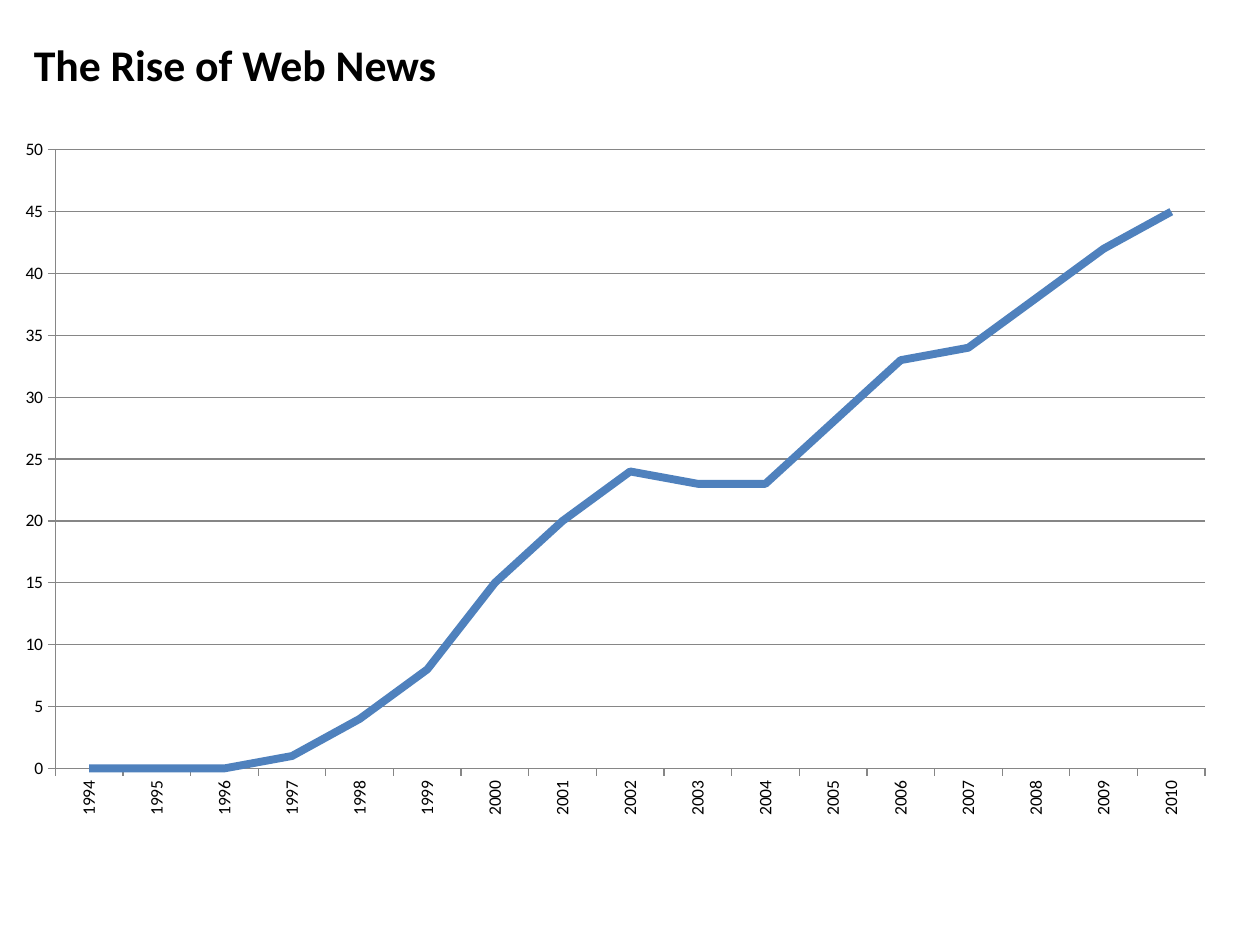
from dataclasses import dataclass

from lxml.etree import SubElement
from pptx import Presentation
from pptx.chart.axis import CategoryAxis, ValueAxis
from pptx.chart.chart import Chart
from pptx.chart.data import CategoryChartData
from pptx.dml.color import RGBColor
from pptx.dml.line import LineFormat
from pptx.enum.chart import XL_CHART_TYPE, XL_TICK_MARK
from pptx.enum.text import MSO_AUTO_SIZE
from pptx.oxml import parse_xml
from pptx.oxml.ns import nsdecls, qn
from pptx.util import Inches, Pt

COLORS = {"text": "000000", "grid": "868686", "news": "4F81BD"}
FONT = "Calibri"
FIRST_YEAR = 1994
WEB_NEWS = (0, 0, 0, 1, 4, 8, 15, 20, 24, 23, 23, 28, 33, 34, 38, 42, 45)


@dataclass(frozen=True)
class PlotLayout:
    x: float
    y: float
    w: float
    h: float


def style_line(line: LineFormat, color: str, width: float) -> None:
    line.color.rgb = RGBColor.from_string(COLORS[color])
    line.width = Pt(width)


def style_axis(axis: CategoryAxis | ValueAxis) -> None:
    axis.major_tick_mark = XL_TICK_MARK.OUTSIDE
    axis.minor_tick_mark = XL_TICK_MARK.NONE
    axis.tick_labels.font.size = Pt(10)
    style_line(axis.format.line, "grid", 0.75)


def place_plot(chart: Chart, layout: PlotLayout) -> None:
    plot_area = chart.element.find(".//" + qn("c:plotArea"))
    for old_layout in plot_area.findall(qn("c:layout")):
        plot_area.remove(old_layout)
    inner = parse_xml(f"<c:layout {nsdecls('c')}><c:manualLayout/></c:layout>")
    settings = {"layoutTarget": "inner", "xMode": "edge", "yMode": "edge",
                "x": layout.x, "y": layout.y, "w": layout.w, "h": layout.h}
    for tag, setting in settings.items():
        SubElement(inner[0], qn(f"c:{tag}")).set("val", str(setting))
    plot_area.insert(0, inner)


def turn_year_labels(chart: Chart) -> None:
    body = chart.element.find(".//" + qn("c:catAx")).find(".//" + qn("a:bodyPr"))
    body.set("rot", "-5400000")
    body.set("vert", "horz")


def main() -> None:
    """Build the slide on the rise of web news."""
    deck = Presentation()
    deck.slide_width, deck.slide_height = Inches(10), Inches(7.5)
    slide = deck.slides.add_slide(deck.slide_layouts[6])

    news_data = CategoryChartData()
    news_data.categories = [str(FIRST_YEAR + i) for i in range(len(WEB_NEWS))]
    news_data.add_series("Series 1", WEB_NEWS)
    chart = slide.shapes.add_chart(
        XL_CHART_TYPE.LINE, Inches(0.01), Inches(1), Inches(9.75), Inches(5.58), news_data
    ).chart
    chart.has_legend = False
    chart.has_title = False
    chart.font.name = FONT
    chart.font.size = Pt(10)
    chart.font.color.rgb = RGBColor.from_string(COLORS["text"])

    years, share = chart.category_axis, chart.value_axis
    for axis in (years, share):
        style_axis(axis)
    share.minimum_scale, share.maximum_scale, share.major_unit = 0, 50, 5
    share.has_major_gridlines = True
    style_line(share.major_gridlines.format.line, "grid", 0.75)
    turn_year_labels(chart)
    place_plot(chart, PlotLayout(0.044, 0.034, 0.936, 0.88))

    chart.plots[0].vary_by_categories = False
    web_news = chart.plots[0].series[0]
    web_news.smooth = False
    style_line(web_news.format.line, "news", 4.5)

    heading = slide.shapes.add_textbox(Inches(0.17), Inches(0.25), Inches(3.43), Inches(0.52))
    heading.text_frame.word_wrap = False
    heading.text_frame.auto_size = MSO_AUTO_SIZE.SHAPE_TO_FIT_TEXT
    heading_run = heading.text_frame.paragraphs[0].add_run()
    heading_run.text = "The Rise of Web News"
    heading_run.font.name = FONT
    heading_run.font.size = Pt(25)
    heading_run.font.bold = True
    heading_run.font.color.rgb = RGBColor.from_string(COLORS["text"])

    deck.save("out.pptx")


if __name__ == "__main__":
    main()
